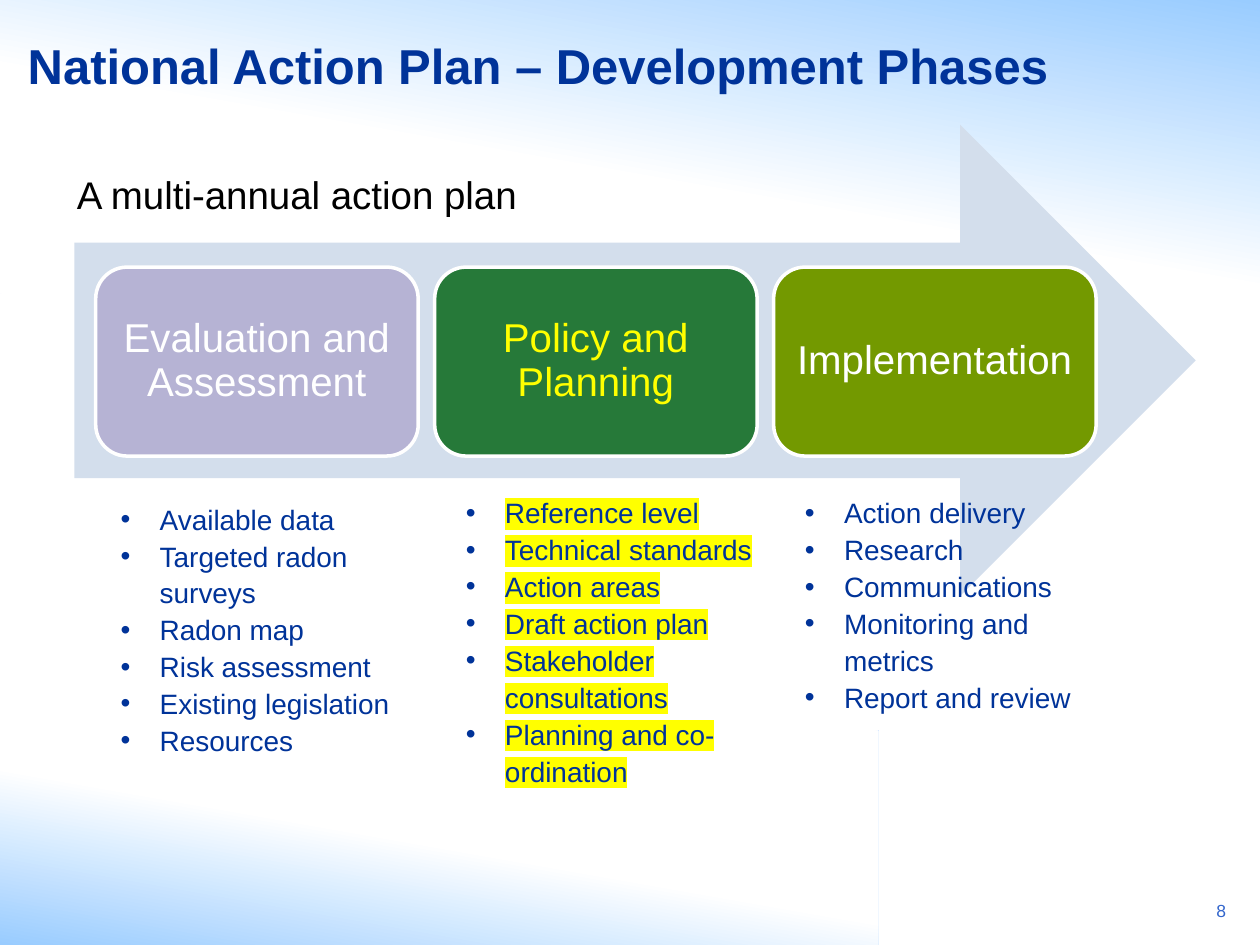
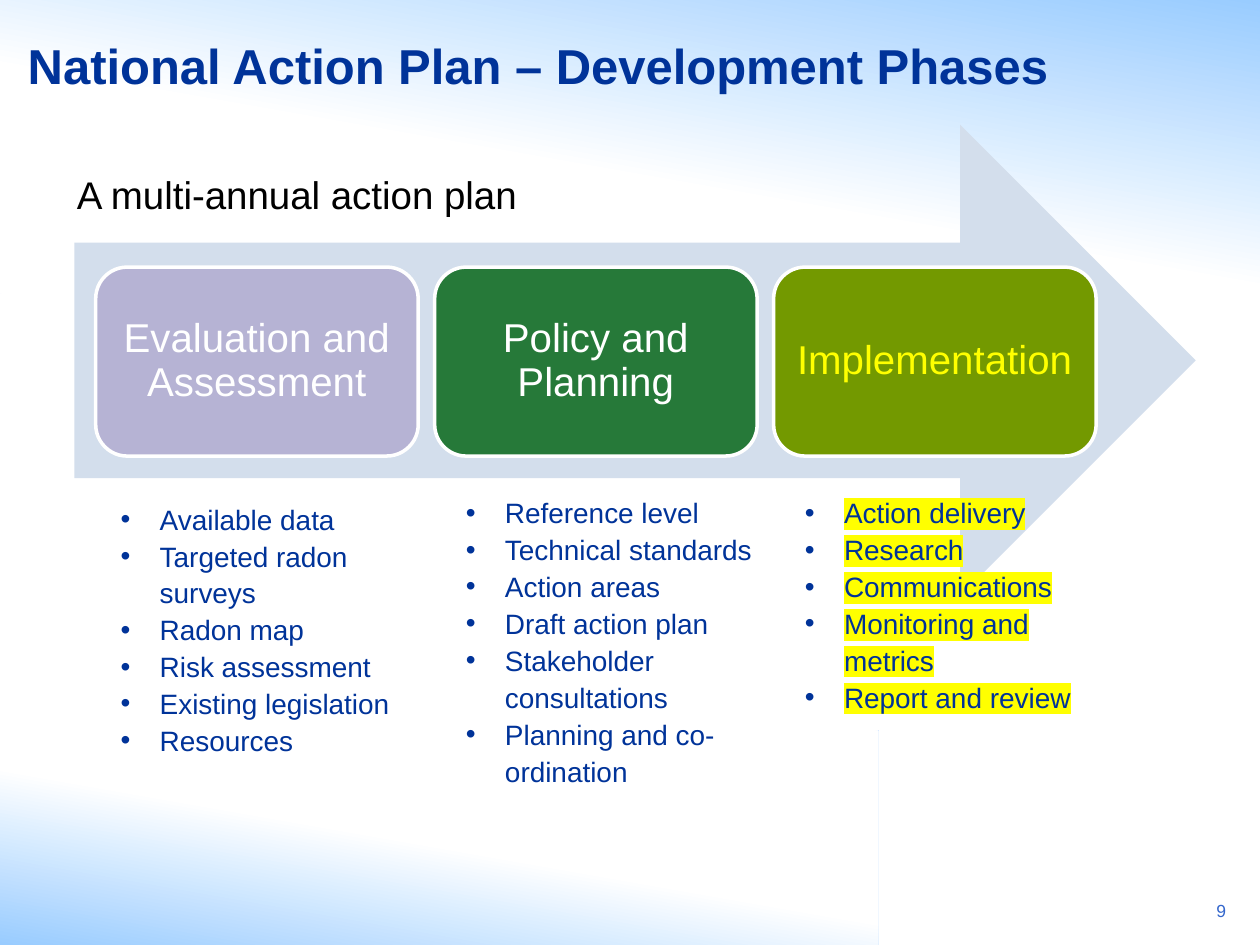
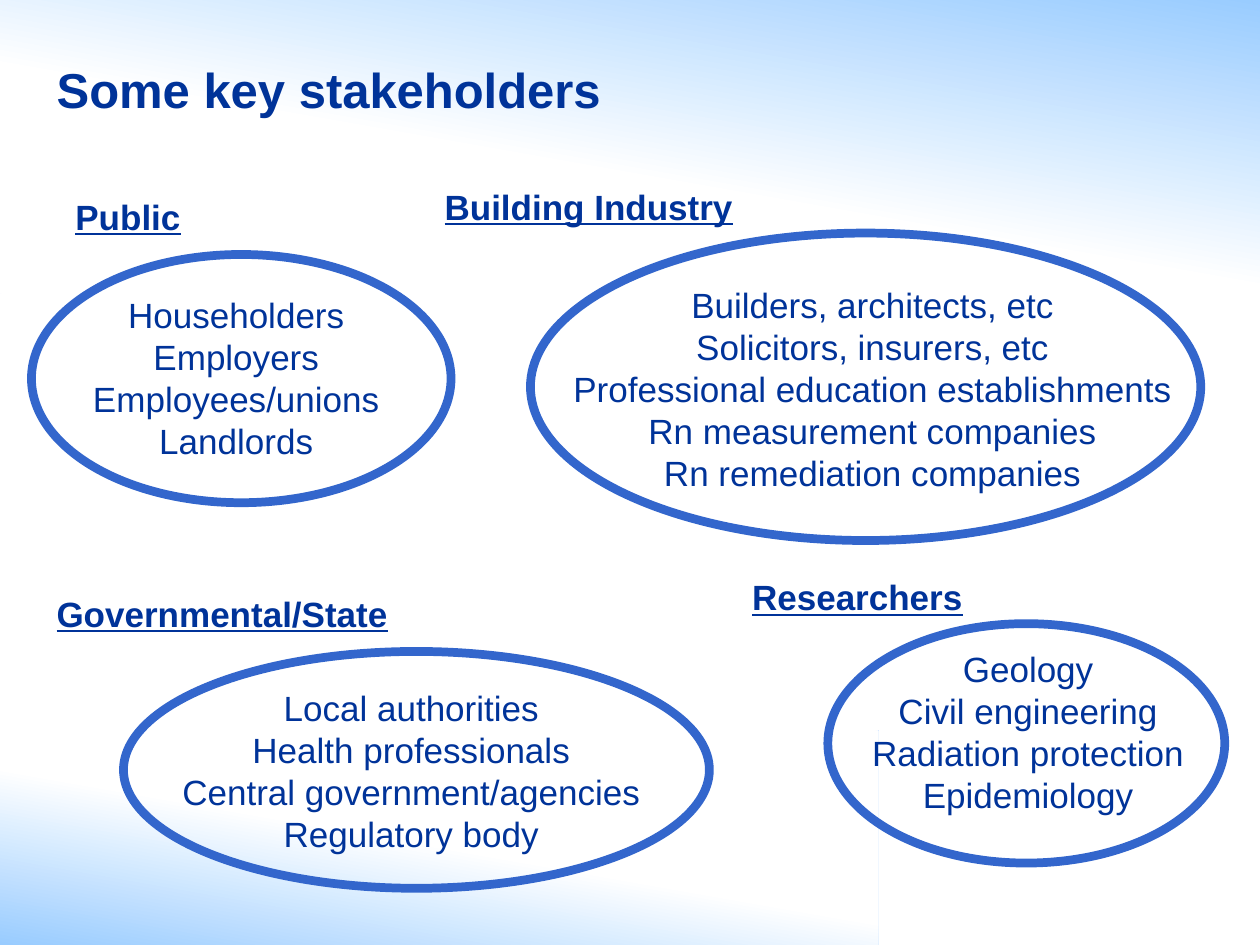
import dataclasses
import typing

import lxml.etree
import pptx
import pptx.dml.color
import pptx.enum.shapes
import pptx.enum.text
import pptx.oxml.ns
import pptx.presentation
import pptx.shapes.autoshape
import pptx.shapes.base
import pptx.slide
import pptx.text.text
import pptx.util

EMU_PER_PX = 9144
ALIGN = pptx.enum.text.PP_ALIGN
ANCHOR = pptx.enum.text.MSO_ANCHOR
FIT = pptx.enum.text.MSO_AUTO_SIZE
SHAPE = pptx.enum.shapes.MSO_SHAPE
TITLE_AND_BODY, TITLE_ONLY = 1, 5


@dataclasses.dataclass(frozen=True)
class Theme:
    font: str = "Arial"
    navy: str = "003399"
    blue: str = "3366CC"
    sky: str = "99CCFF"
    white: str = "FFFFFF"
    black: str = "000000"
    yellow: str = "FFFF00"
    arrow: str = "D3DEEC"
    lavender: str = "B6B3D4"
    green: str = "267939"
    olive: str = "739900"
    title_size: int = 28
    phase_size: int = 23
    lead_size: int = 22
    group_size: int = 20
    list_size: int = 16
    number_size: int = 10


THEME = Theme()


class Area(typing.NamedTuple):
    left: int
    top: int
    width: int
    height: int


class Style(typing.NamedTuple):
    size: int
    color: str = THEME.navy
    bold: bool = False
    underline: bool = False
    highlight: str = ""


class Band(typing.NamedTuple):
    area: Area
    angle: int
    fade_end: float


class Phase(typing.NamedTuple):
    name: str
    color: str
    list_area: Area
    items: tuple[str, ...]


class Group(typing.NamedTuple):
    name: str
    name_area: Area
    ellipse: Area
    list_area: Area
    wrap: bool
    members: tuple[str, ...]


BANDS = (
    Band(Area(0, 580, 697, 170), 80, 0.48),
    Band(Area(0, 0, 1000, 233), 260, 0.56),
)

PHASES = (
    Phase("Evaluation and Assessment", THEME.lavender, Area(86, 391, 244, 217),
          ("Available data", "Targeted radon surveys", "Radon map",
           "Risk assessment", "Existing legislation", "Resources")),
    Phase("Policy and Planning", THEME.green, Area(360, 386, 263, 247),
          ("Reference level", "Technical standards", "Action areas",
           "Draft action plan", "Stakeholder consultations",
           "Planning and co-ordination")),
    Phase("Implementation", THEME.olive, Area(629, 386, 258, 188),
          ("Action delivery", "Research", "Communications",
           "Monitoring and metrics", "Report and review")),
)
FIRST_PHASE = Area(76, 212, 256, 150)
PHASE_STEP = 269
PHASE_INSET = 8
BULLET_INDENT = 31

GROUPS = (
    Group("Public", Area(50, 150, 104, 44), Area(25, 202, 333, 197),
          Area(59, 228, 257, 178), False,
          ("Householders", "Employers", "Employees/unions", "Landlords")),
    Group("Governmental/State", Area(35, 465, 285, 44), Area(98, 517, 465, 188),
          Area(130, 540, 393, 145), False,
          ("Local authorities", "Health professionals",
           "Central government/agencies", "Regulatory body")),
    Group("Building Industry", Area(343, 142, 251, 44), Area(421, 185, 532, 244),
          Area(429, 220, 527, 178), True,
          ("Builders, architects, etc", "Solicitors, insurers, etc",
           "Professional education establishments",
           "Rn measurement companies", "Rn remediation companies")),
    Group("Researchers", Area(587, 452, 189, 44), Area(657, 495, 315, 190),
          Area(676, 509, 280, 212), True,
          ("Geology", "Civil engineering", "Radiation protection", "Epidemiology")),
)


def px(length: int) -> pptx.util.Emu:
    return pptx.util.Emu(length * EMU_PER_PX)


def rgb(color: str) -> pptx.dml.color.RGBColor:
    return pptx.dml.color.RGBColor.from_string(color)


def add_element(parent: typing.Any, tag: str, **attributes: str) -> typing.Any:
    return lxml.etree.SubElement(parent, pptx.oxml.ns.qn(tag), attributes)


def place(box: pptx.shapes.base.BaseShape, area: Area) -> None:
    box.left, box.top, box.width, box.height = map(px, area)


def add_span(para: pptx.text.text._Paragraph, text: str, style: Style) -> None:
    span = para.add_run()
    span.text = text
    font = span.font
    font.size = pptx.util.Pt(style.size)
    font.color.rgb = rgb(style.color)
    font.bold = style.bold
    font.underline = style.underline
    if style.highlight:
        highlight = add_element(span._r.get_or_add_rPr(), "a:highlight")
        add_element(highlight, "a:srgbClr", val=style.highlight)
    font.name = THEME.font


def set_bullet(para: pptx.text.text._Paragraph, mark: str, indent: int) -> None:
    props = para._p.get_or_add_pPr()
    props.set("marL", str(px(indent)))
    props.set("indent", str(-px(indent)))
    if mark:
        add_element(props, "a:buFont", typeface=THEME.font)
        add_element(props, "a:buChar", char=mark)
    else:
        add_element(props, "a:buNone")


def write_lines(frame: pptx.text.text.TextFrame, lines: typing.Sequence[str],
                style: Style, align: ALIGN = ALIGN.LEFT, spacing: float = 1.0,
                bullet: str = "") -> None:
    for index, line in enumerate(lines):
        para = frame.add_paragraph() if index else frame.paragraphs[0]
        para.alignment = align
        para.line_spacing = spacing
        para.space_before = pptx.util.Pt(0)
        set_bullet(para, bullet, BULLET_INDENT if bullet else 0)
        add_span(para, line, style)


def add_text(page: pptx.slide.Slide, area: Area, lines: typing.Sequence[str],
             style: Style, wrap: bool = True, **layout: typing.Any) -> None:
    frame = page.shapes.add_textbox(*map(px, area)).text_frame
    frame.word_wrap = wrap
    frame.auto_size = FIT.SHAPE_TO_FIT_TEXT
    write_lines(frame, lines, style, **layout)


def add_figure(page: pptx.slide.Slide, kind: SHAPE, area: Area, fill: str = "",
               line: str = "", weight: int = 0) -> pptx.shapes.autoshape.Shape:
    figure = page.shapes.add_shape(kind, *map(px, area))
    figure.shadow.inherit = False
    if fill:
        figure.fill.solid()
        figure.fill.fore_color.rgb = rgb(fill)
    else:
        figure.fill.background()
    if line:
        figure.line.color.rgb = rgb(line)
        figure.line.width = pptx.util.Pt(weight)
    else:
        figure.line.fill.background()
    return figure


def move_bands_to_master(deck: pptx.presentation.Presentation,
                         page: pptx.slide.Slide) -> None:
    first_placeholder = deck.slide_master.placeholders[0].element
    for band in BANDS:
        box = add_figure(page, SHAPE.RECTANGLE, band.area)
        box.fill.gradient()
        box.fill.gradient_angle = band.angle
        start, end = box.fill.gradient_stops
        start.color.rgb, start.position = rgb(THEME.sky), 0.0
        end.color.rgb, end.position = rgb(THEME.white), band.fade_end
        first_placeholder.addprevious(box.element)


def fill_placeholder(box: typing.Any, area: Area, text: str, style: Style,
                     anchor: ANCHOR) -> None:
    place(box, area)
    frame = box.text_frame
    frame.auto_size = FIT.NONE
    frame.vertical_anchor = anchor
    write_lines(frame, [text], style)


def add_page(deck: pptx.presentation.Presentation, layout: int, title: str,
             title_area: Area) -> pptx.slide.Slide:
    page = deck.slides.add_slide(deck.slide_layouts[layout])
    fill_placeholder(page.shapes.title, title_area, title,
                     Style(THEME.title_size, bold=True), ANCHOR.MIDDLE)
    return page


def add_phase(page: pptx.slide.Slide, index: int, active: bool) -> None:
    phase = PHASES[index]
    area = FIRST_PHASE._replace(left=FIRST_PHASE.left + index * PHASE_STEP)
    box = add_figure(page, SHAPE.ROUNDED_RECTANGLE, area, phase.color, THEME.white, 2)
    frame = box.text_frame
    frame.word_wrap = True
    frame.vertical_anchor = ANCHOR.MIDDLE
    frame.margin_left = frame.margin_right = px(PHASE_INSET)
    frame.margin_top = frame.margin_bottom = px(PHASE_INSET)
    name_color = THEME.yellow if active else THEME.white
    write_lines(frame, [phase.name], Style(THEME.phase_size, name_color),
                ALIGN.CENTER, 0.9)
    highlight = THEME.yellow if active else ""
    add_text(page, phase.list_area, phase.items,
             Style(THEME.list_size, highlight=highlight), spacing=1.1, bullet="•")


def add_phases_page(deck: pptx.presentation.Presentation, number: str,
                    active_phase: int) -> pptx.slide.Slide:
    page = add_page(deck, TITLE_AND_BODY, "National Action Plan – Development Phases",
                    Area(12, 0, 882, 103))
    fill_placeholder(page.placeholders[1], Area(51, 131, 859, 74),
                     "A multi-annual action plan",
                     Style(THEME.lead_size, THEME.black), ANCHOR.TOP)
    add_text(page, Area(927, 709, 56, 32), [number],
             Style(THEME.number_size, THEME.blue), align=ALIGN.RIGHT)
    add_figure(page, SHAPE.RIGHT_ARROW, Area(59, 99, 890, 374), THEME.arrow)
    for index in range(len(PHASES)):
        add_phase(page, index, index == active_phase)
    return page


def add_stakeholders_page(deck: pptx.presentation.Presentation) -> None:
    page = add_page(deck, TITLE_ONLY, "Some key stakeholders", Area(35, 8, 597, 125))
    for group in GROUPS:
        add_figure(page, SHAPE.OVAL, group.ellipse, line=THEME.blue, weight=5)
        add_text(page, group.name_area, [group.name],
                 Style(THEME.group_size, bold=True, underline=True), wrap=False)
        add_text(page, group.list_area, group.members, Style(THEME.group_size),
                 wrap=group.wrap, align=ALIGN.CENTER)


def main() -> None:
    deck = pptx.Presentation()
    deck.slide_width, deck.slide_height = px(1000), px(750)
    first_page = add_phases_page(deck, "8", active_phase=1)
    move_bands_to_master(deck, first_page)
    add_phases_page(deck, "9", active_phase=2)
    add_stakeholders_page(deck)
    deck.save("out.pptx")


if __name__ == "__main__":
    main()
